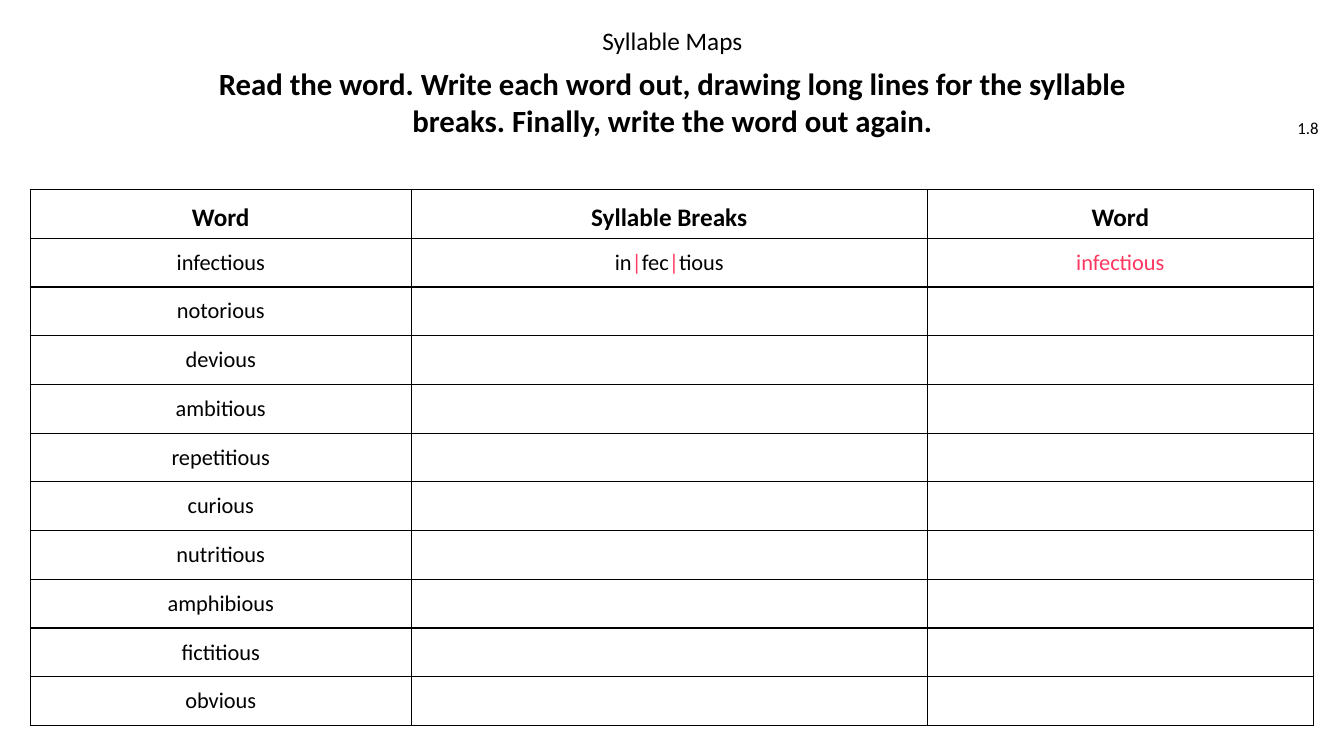
from pptx import Presentation
from pptx.dml.color import RGBColor
from pptx.enum.text import MSO_ANCHOR as Anchor, PP_ALIGN as Align
from pptx.oxml import parse_xml
from pptx.oxml.ns import nsdecls
from pptx.util import Pt

BLACK = RGBColor(0x00, 0x00, 0x00)
WHITE = RGBColor(0xFF, 0xFF, 0xFF)
PINK = RGBColor(0xFF, 0x37, 0x60)
FONT = "Calibri"

TASK = ("Read the word. Write each word out, drawing long lines for the "
        "syllable breaks. Finally, write the word out again.")
HEADS = ["Word", "Syllable Breaks", "Word"]
WORDS = ["infectious", "notorious", "devious", "ambitious", "repetitious",
         "curious", "nutritious", "amphibious", "fictitious", "obvious"]
BREAKS = [("in", BLACK), ("|", PINK), ("fec", BLACK), ("|", PINK),
          ("tious", BLACK)]
COLS = [272.16, 368.64, 275.76]


def write(frame, text, size=16, bold=False, color=BLACK, align=Align.CENTER,
          anchor=Anchor.MIDDLE, line=None):
    """Fill a frame with a string, or with (string, colour) pairs."""
    frame.word_wrap = True
    frame.vertical_anchor = anchor
    para = frame.paragraphs[0]
    para.alignment = align
    para.space_before = Pt(0)
    para.line_spacing = line
    for part, tint in [(text, color)] if isinstance(text, str) else text:
        run = para.add_run()
        run.text = part
        font = run.font
        font.name, font.size, font.bold = FONT, Pt(size), bold
        font.color.rgb = tint


def add_box(slide, box, text, **style):
    shape = slide.shapes.add_textbox(*map(Pt, box))
    write(shape.text_frame, text, **style)


def add_head(slide, left, top, width):
    # Title, centred over the task line
    title = slide.shapes.title
    title.left, title.top = Pt(left + 133.2), Pt(top)
    title.width, title.height = Pt(width - 266.4), Pt(25.2)
    write(title.text_frame, "Syllable Maps", size=18, anchor=Anchor.TOP,
          line=0.9)
    # Task line
    add_box(slide, (left, top + 26.64, width, 59.04), TASK, size=22, bold=True)
    # Sheet number
    add_box(slide, (left + 761.76, top + 60.48, 45.36, 28.8), "1.8", size=12,
            align=Align.RIGHT)


def style_cell(cell):
    props = cell._tc.get_or_add_tcPr()
    for side in "LRTB":
        props.append(parse_xml(
            f'<a:ln{side} {nsdecls("a")} w="{Pt(1)}"><a:solidFill>'
            f'<a:srgbClr val="{BLACK}"/></a:solidFill></a:ln{side}>'))
    cell.fill.solid()
    cell.fill.fore_color.rgb = WHITE
    cell.margin_left = cell.margin_right = Pt(7.2)
    cell.margin_top = cell.margin_bottom = Pt(3.6)


def fill_cell(cell, text, **style):
    anchor = style.pop("anchor", Anchor.MIDDLE)
    write(cell.text_frame, text, **style)
    cell.vertical_anchor = anchor


def add_grid(slide, left, top, height):
    count = len(WORDS) + 1
    table = slide.shapes.add_table(count, len(COLS), Pt(left), Pt(top),
                                   Pt(sum(COLS)), Pt(height)).table
    table.first_row = table.horz_banding = False
    for col, width in zip(table.columns, COLS):
        col.width = Pt(width)
    for row in table.rows:
        row.height = Pt(height / count)
    for cell in table.iter_cells():
        style_cell(cell)
    # Header row
    for col, text in enumerate(HEADS):
        fill_cell(table.cell(0, col), text, size=18, bold=True,
                  anchor=Anchor.BOTTOM)
    # Word list
    for row, word in enumerate(WORDS, 1):
        fill_cell(table.cell(row, 0), word)
    # Worked example
    fill_cell(table.cell(1, 1), BREAKS)
    fill_cell(table.cell(1, 2), WORDS[0], color=PINK)


def main():
    deck = Presentation()
    deck.slide_width, deck.slide_height = Pt(960), Pt(540)
    slide = deck.slides.add_slide(deck.slide_layouts[5])
    add_head(slide, 141.84, 16.56, 676.8)
    add_grid(slide, 21.6, 135.36, 383.04)
    deck.save("out.pptx")


if __name__ == "__main__":
    main()
